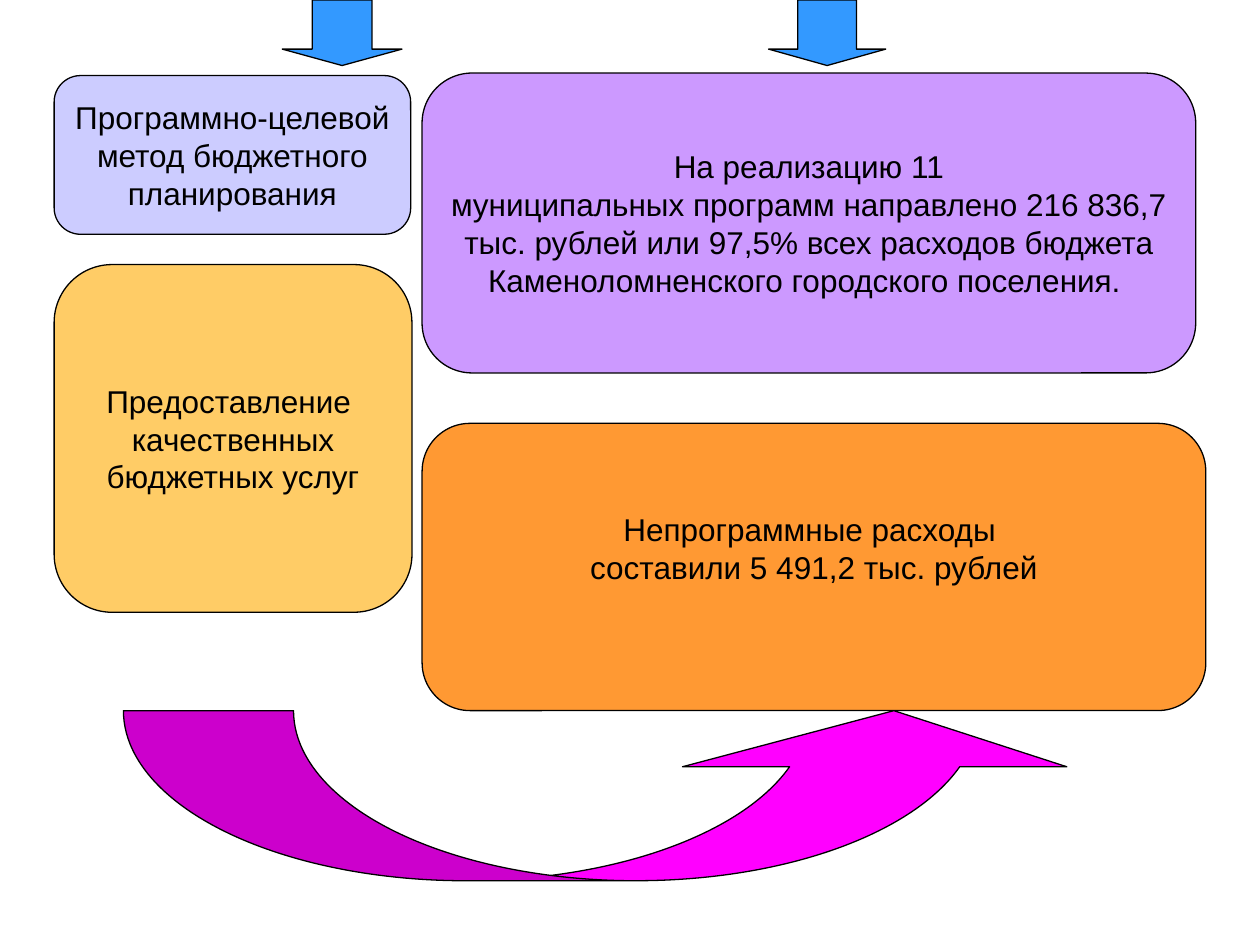
from pptx import Presentation
from pptx.dml.color import RGBColor
from pptx.enum.shapes import MSO_SHAPE
from pptx.enum.text import MSO_ANCHOR, PP_ALIGN
from pptx.util import Inches, Pt

DOWN_ARROW = MSO_SHAPE.DOWN_ARROW
CURVED_ARROW = MSO_SHAPE.CURVED_UP_ARROW
ROUNDED_BOX = MSO_SHAPE.FLOWCHART_ALTERNATE_PROCESS
MIDDLE = MSO_ANCHOR.MIDDLE
CENTER = PP_ALIGN.CENTER

COLORS = {
    "black": "000000",
    "blue": "3399FF",
    "lavender": "CCCCFF",
    "violet": "CC99FF",
    "yellow": "FFCC66",
    "orange": "FF9933",
    "magenta": "FF00FF",
}


def color(name):
    return RGBColor.from_string(COLORS[name])


def write_text(frame, text, size=18, font="Arial", ink="black", align=CENTER):
    for index, line in enumerate(text.split("\n")):
        para = frame.paragraphs[0] if index == 0 else frame.add_paragraph()
        para.alignment = align
        span = para.add_run()
        span.text = line
        span.font.size = Pt(size)
        span.font.name = font
        span.font.color.rgb = color(ink)


class BudgetSlide:
    def __init__(self, page, outline="black", outline_width=0.75):
        self.page = page
        self.outline = outline
        self.outline_width = outline_width

    def shape(self, kind, place, fill):
        shape = self.page.shapes.add_shape(kind, *map(Inches, place))
        shape.shadow.inherit = False
        shape.fill.solid()
        shape.fill.fore_color.rgb = color(fill)
        shape.line.color.rgb = color(self.outline)
        shape.line.width = Pt(self.outline_width)
        return shape

    def arrow(self, kind, place, fill, adjustments):
        arrow = self.shape(kind, place, fill)
        for index, value in enumerate(adjustments):
            arrow.adjustments[index] = value

    def box(self, place, fill, text, bottom=0.05):
        frame = self.shape(ROUNDED_BOX, place, fill).text_frame
        frame.word_wrap = False
        frame.vertical_anchor = MIDDLE
        frame.margin_bottom = Inches(bottom)
        write_text(frame, text)


def main():
    deck = Presentation()
    deck.slide_width = Inches(10)
    deck.slide_height = Inches(7.5)
    slide = BudgetSlide(deck.slides.add_slide(deck.slide_layouts[6]))

    for left, width in ((2.24, 0.95), (6.1, 0.93)):
        slide.arrow(DOWN_ARROW, (left, 0, width, 0.52), "blue", (0.5, 0.25))

    slide.box((0.43, 0.6, 2.83, 1.26), "lavender",
              "Программно-целевой\nметод бюджетного\nпланирования")
    slide.box((3.35, 0.58, 6.14, 2.38), "violet",
              "На реализацию 11\n"
              "муниципальных программ направлено 216 836,7\n"
              "тыс. рублей или 97,5% всех расходов бюджета\n"
              "Каменоломненского городского поселения. ")
    slide.box((0.43, 2.1, 2.84, 2.76), "yellow",
              "Предоставление \nкачественных\nбюджетных услуг")
    slide.box((3.35, 3.36, 6.22, 2.28), "orange",
              "Непрограммные расходы \nсоставили 5 491,2 тыс. рублей",
              bottom=0.35)

    slide.arrow(CURVED_ARROW, (0.98, 5.64, 7.64, 1.35), "magenta",
                (1.13, 2.26, 0.33))
    deck.save("out.pptx")


if __name__ == "__main__":
    main()
